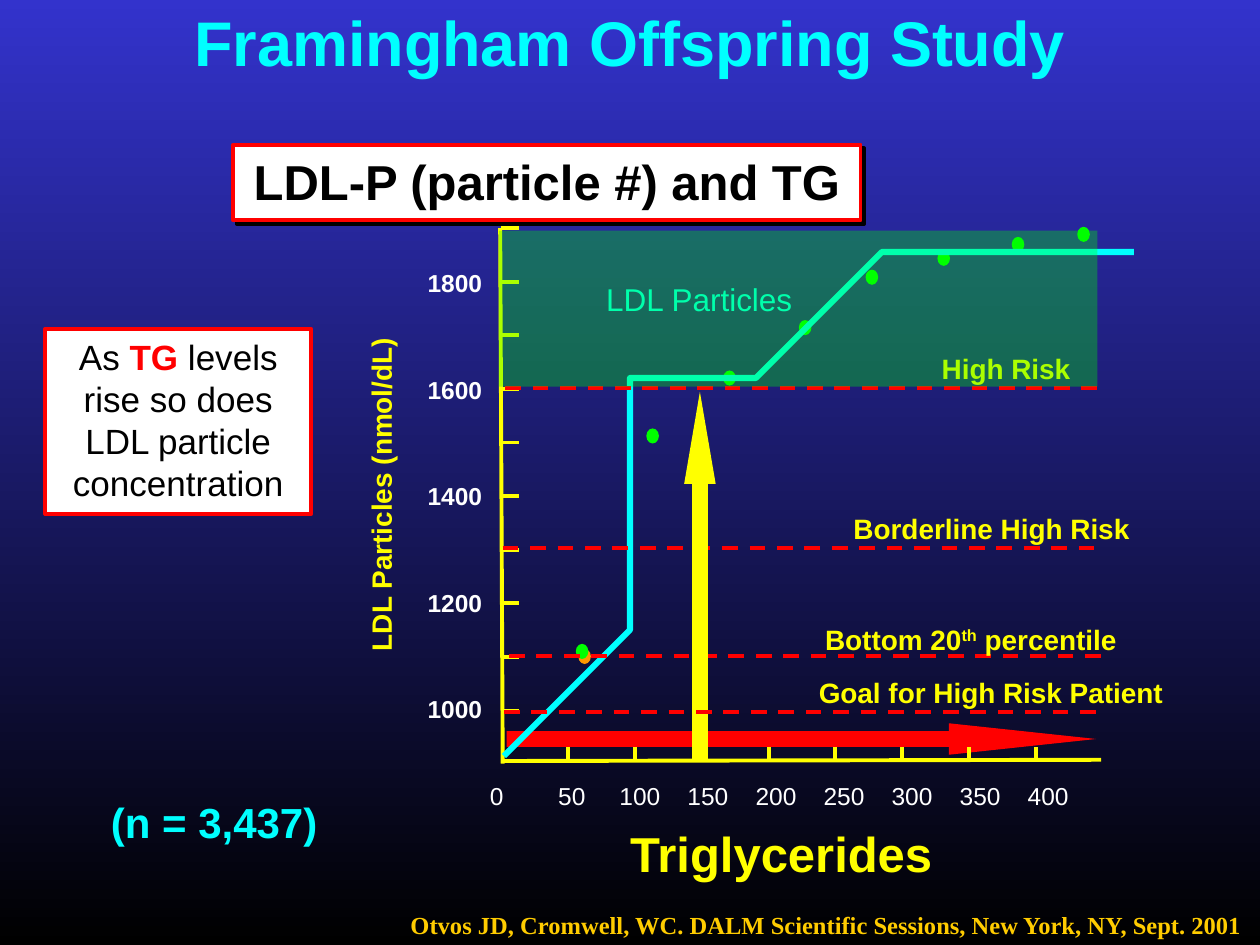
"""Build the Framingham Offspring Study slide on LDL particles and triglycerides."""
from dataclasses import dataclass

from lxml import etree
from pptx import Presentation
from pptx.dml.color import RGBColor
from pptx.enum.dml import MSO_LINE
from pptx.enum.shapes import MSO_CONNECTOR, MSO_SHAPE
from pptx.enum.text import MSO_ANCHOR, PP_ALIGN
from pptx.oxml.ns import qn
from pptx.util import Inches, Pt

STRAIGHT = MSO_CONNECTOR.STRAIGHT
RECTANGLE, OVAL = MSO_SHAPE.RECTANGLE, MSO_SHAPE.OVAL
RIGHT_ARROW, UP_ARROW = MSO_SHAPE.RIGHT_ARROW, MSO_SHAPE.UP_ARROW
LEFT, CENTER = PP_ALIGN.LEFT, PP_ALIGN.CENTER
TOP = MSO_ANCHOR.TOP
DASH = MSO_LINE.DASH


@dataclass(frozen=True)
class Theme:
    """Colours, fonts and type sizes of the slide."""
    sky: str = "3333CC"
    black: str = "000000"
    white: str = "FFFFFF"
    cyan: str = "00FFFF"
    yellow: str = "FFFF00"
    red: str = "FF0000"
    green: str = "00FF00"
    orange: str = "FF9900"
    gold: str = "FFCC00"
    font: str = "Arial"
    source_font: str = "Times New Roman"
    title: int = 36
    heading: int = 28
    sample: int = 24
    note: int = 20
    series: int = 18
    label: int = 16
    tick: int = 14
    rule: float = 2.25
    curve: float = 3.5


class SlideBuilder:
    """Draws styled elements on one slide."""

    def __init__(self, slide, theme):
        """Keep the slide and its theme."""
        self.slide, self.theme = slide, theme

    def background(self, top, bottom):
        """Fill the background with a vertical gradient."""
        fill = self.slide.background.fill
        fill.gradient()
        fill.gradient_angle = 270
        for stop, color in zip(fill.gradient_stops, (top, bottom)):
            stop.color.rgb = RGBColor.from_string(color)

    def set_text(self, shape, parts, size, color, bold=True, font=None, align=CENTER, wrap=True):
        """Put one paragraph of (text, overrides) parts into a shape."""
        frame = shape.text_frame
        frame.word_wrap = wrap
        frame.vertical_anchor = TOP
        frame.margin_left = frame.margin_right = Inches(0.1)
        frame.margin_top = frame.margin_bottom = Inches(0.05)
        paragraph = frame.paragraphs[0]
        paragraph.alignment = align
        for words, changes in [(parts, {})] if isinstance(parts, str) else parts:
            run = paragraph.add_run()
            run.text = words
            run.font.name = font or self.theme.font
            run.font.size = Pt(size)
            run.font.bold = changes.get("bold", bold)
            run.font.color.rgb = RGBColor.from_string(changes.get("color", color))
            if "baseline" in changes:
                run.font._element.set("baseline", changes["baseline"])
        return paragraph

    def title(self, words, box):
        """Place and format the title."""
        heading = self.slide.shapes.title
        heading.left, heading.top, heading.width, heading.height = map(Inches, box)
        self.set_text(heading, words, self.theme.title, self.theme.cyan)

    def text(self, parts, box, size, color, rotation=0, **style):
        """Add a text box and return its paragraph."""
        label = self.slide.shapes.add_textbox(*map(Inches, box))
        label.rotation = rotation
        return self.set_text(label, parts, size, color, **style)

    def shape(self, kind, box, fill, border=None, head=None, alpha=None):
        """Add a filled preset shape."""
        figure = self.slide.shapes.add_shape(kind, *map(Inches, box))
        figure.shadow.inherit = False
        figure.fill.solid()
        figure.fill.fore_color.rgb = RGBColor.from_string(fill)
        if alpha:
            color = figure._element.spPr.find(qn("a:solidFill"))[0]
            etree.SubElement(color, qn("a:alpha"), val=str(alpha * 1000))
        if border:
            figure.line.color.rgb = RGBColor.from_string(border)
            figure.line.width = Pt(self.theme.rule)
        else:
            figure.line.fill.background()
        if head:
            figure.adjustments[0], figure.adjustments[1] = 0.5, head
        return figure

    def callout(self, parts, box, size, shadow=False, **style):
        """Add a white box with a red border and black text."""
        panel = self.shape(RECTANGLE, box, self.theme.white, self.theme.red)
        if shadow:
            effects = panel._element.spPr.find(qn("a:effectLst"))
            cast = etree.SubElement(effects, qn("a:outerShdw"), dist=str(Pt(2.8)),
                                    dir="2700000", algn="ctr", rotWithShape="0")
            etree.SubElement(cast, qn("a:srgbClr"), val=self.theme.black)
        self.set_text(panel, parts, size, self.theme.black, **style)

    def line(self, start, end, color, dash=None):
        """Add a straight line."""
        rule = self.slide.shapes.add_connector(STRAIGHT, *map(Inches, start + end))
        rule.line.color.rgb = RGBColor.from_string(color)
        rule.line.width = Pt(self.theme.rule)
        if dash:
            rule.line.dash_style = dash
        etree.SubElement(rule._element.spPr, qn("a:effectLst"))

    def curve(self, points, color):
        """Add an open Bezier curve: a start, then three points a segment."""
        (x, y), *rest = points
        builder = self.slide.shapes.build_freeform(x, y, scale=Inches(1))
        builder.add_line_segments(rest, close=False)
        trend = builder.convert_to_shape()
        trend.shadow.inherit = False
        trend.fill.background()
        trend.line.color.rgb = RGBColor.from_string(color)
        trend.line.width = Pt(self.theme.curve)
        steps = trend._element.xpath(".//a:lnTo")
        for first, second, third in zip(*[iter(steps)] * 3):
            first.tag = qn("a:cubicBezTo")
            for step in (second, third):
                first.append(step[0])
                step.getparent().remove(step)


def main():
    """Build and save the slide."""
    theme = Theme()
    deck = Presentation()
    deck.slide_width, deck.slide_height = Inches(10), Inches(7.5)
    page = SlideBuilder(deck.slides.add_slide(deck.slide_layouts[5]), theme)
    page.background(theme.sky, theme.black)

    page.line((3.97, 1.81), (3.99, 6.06), theme.yellow)
    page.line((3.99, 6.04), (8.74, 6.03), theme.yellow)
    page.title("Framingham Offspring Study", (0, -0.02, 10, 0.7))
    page.callout("LDL-P (particle #) and TG", (1.85, 1.15, 4.98, 0.6), theme.heading, shadow=True)
    message = [("As ", {}), ("TG", {"color": theme.red, "bold": True}),
               (" levels rise so does LDL particle concentration", {})]
    page.callout(message, (0.36, 2.61, 2.11, 1.47), theme.note, bold=False)
    page.shape(RIGHT_ARROW, (4.02, 5.74, 4.68, 0.25), theme.red, head=4.68)

    for row in range(10):
        y = 1.81 + 0.4255 * row
        page.line((3.98, y), (4.12, y), theme.yellow)
    for row, level in enumerate(range(1800, 999, -200)):
        page.text(str(level), (3.29, 2.08 + 0.845 * row, 0.64, 0.33), theme.tick, theme.white)
    page.text("LDL Particles (nmol/dL)", (1.19, 3.74, 3.67, 0.37), theme.label, theme.yellow,
              rotation=270)

    levels = range(0, 401, 50)
    scale = page.text("\t".join(map(str, levels)), (3.79, 6.15, 5.71, 0.33), theme.tick,
                      theme.white, bold=False, align=LEFT)
    stops = etree.SubElement(scale._p.get_or_add_pPr(), qn("a:tabLst"))
    for column in range(len(levels) - 1):
        etree.SubElement(stops, qn("a:tab"), pos=str(Inches(0.65 + 0.54 * column)), algn="ctr")
    page.text("Triglycerides", (4.76, 6.49, 2.88, 0.57), theme.heading, theme.yellow)
    page.text("LDL Particles", (4.57, 2.17, 1.96, 0.4), theme.series, theme.cyan, bold=False)

    page.shape(OVAL, (4.59, 5.15, 0.1, 0.12), theme.orange)
    for x, y in [(4.57, 5.11), (5.13, 3.4), (5.74, 2.94), (6.34, 2.54), (6.87, 2.14),
                 (7.44, 1.99), (8.03, 1.88), (8.55, 1.8)]:
        page.shape(OVAL, (x, y, 0.1, 0.12), theme.green)
    page.curve([(4.38, 6.04), (4.43, 5.8), (4.48, 5.57), (4.6, 5.13),
                (4.73, 4.7), (4.95, 3.81), (5.15, 3.45),
                (5.34, 3.09), (5.55, 3.12), (5.75, 2.98),
                (5.95, 2.83), (6.18, 2.72), (6.38, 2.58),
                (6.57, 2.45), (6.71, 2.26), (6.9, 2.16),
                (7.08, 2.07), (7.28, 2.06), (7.48, 2.02),
                (7.68, 1.98), (7.89, 1.94), (8.07, 1.91),
                (8.26, 1.89), (8.49, 1.86), (8.57, 1.85)], theme.cyan)
    for column in range(8):
        x = 4.51 + 0.53 * column
        page.line((x, 6.04), (x, 5.93), theme.yellow)

    page.text("Otvos JD, Cromwell, WC. DALM Scientific Sessions, New York, NY, Sept. 2001",
              (3.16, 7.17, 6.84, 0.33), theme.tick, theme.gold, font=theme.source_font,
              align=LEFT, wrap=False)
    for x, y in [(4.01, 3.08), (4.04, 5.21), (3.99, 4.35)]:
        page.line((x, y), (x + 4.74, y), theme.red, DASH)
    page.text("(n = 3,437)", (0.78, 6.27, 1.84, 0.5), theme.sample, theme.cyan, wrap=False)
    percentile = [("Bottom 20", {}), ("th", {"baseline": "30000"}), (" percentile", {})]
    for words, box in [(percentile, (6.43, 4.89, 2.55, 0.37)),
                       ("Borderline High Risk", (6.67, 4.01, 2.4, 0.37)),
                       ("High Risk", (7.37, 2.74, 1.23, 0.37))]:
        page.text(words, box, theme.label, theme.yellow, wrap=False)
    page.shape(RECTANGLE, (3.96, 1.83, 4.75, 1.24), theme.green, alpha=33)
    page.shape(UP_ARROW, (5.43, 3.11, 0.25, 2.92), theme.yellow, head=2.92)
    page.line((4, 5.65), (8.74, 5.65), theme.red, DASH)
    page.text("Goal for High Risk Patient", (6.39, 5.31, 2.95, 0.37), theme.label, theme.yellow,
              wrap=False)
    deck.save("out.pptx")


if __name__ == "__main__":
    main()
